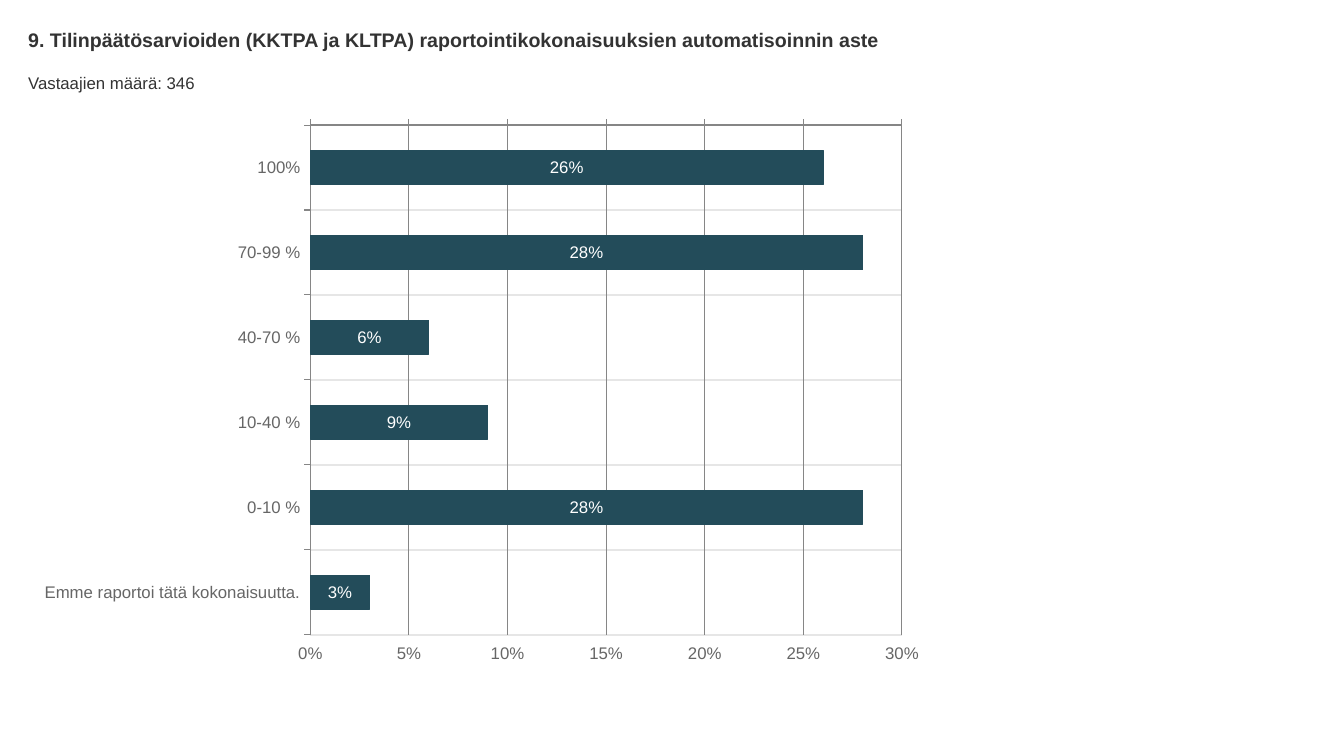
from dataclasses import dataclass
from typing import Any

from lxml.etree import SubElement
from pptx import Presentation
from pptx.chart.chart import Chart
from pptx.chart.data import CategoryChartData
from pptx.dml.color import RGBColor
from pptx.enum.chart import (XL_CHART_TYPE, XL_LABEL_POSITION, XL_TICK_LABEL_POSITION,
                             XL_TICK_MARK)
from pptx.enum.text import MSO_ANCHOR, MSO_AUTO_SIZE, PP_ALIGN
from pptx.oxml.ns import qn
from pptx.util import Cm, Pt

TEXT, AXIS_TEXT, AXIS_LINE = "333333", "666666", "868686"
BAR, BAND_LINE, LABEL = "234C5A", "E6E6E6", "FFFFFF"
LEFT = 0.71


@dataclass(frozen=True)
class Heading:
    text: str
    top: float
    height: float
    size: int
    bold: bool


@dataclass(frozen=True)
class AnswerShare:
    answer: str
    share: float


TITLE = Heading("9. Tilinpäätösarvioiden (KKTPA ja KLTPA) raportointikokonaisuuksien "
                "automatisoinnin aste", 0.71, 0.58, 14, True)
RESPONDENTS = Heading("Vastaajien määrä: 346", 1.83, 0.51, 12, False)
ANSWERS = [
    AnswerShare("100%", 0.26),
    AnswerShare("70-99 %", 0.28),
    AnswerShare("40-70 %", 0.06),
    AnswerShare("10-40 %", 0.09),
    AnswerShare("0-10 %", 0.28),
    AnswerShare("Emme raportoi tätä kokonaisuutta.", 0.03),
]
PLOT_AREA = {"x": 0.31, "y": 0.02, "w": 0.65, "h": 0.91}


def rgb(value: str) -> RGBColor:
    return RGBColor.from_string(value)


def apply(target: Any, values: dict[str, Any]) -> None:
    for name, value in values.items():
        setattr(target, name, value)


def style_font(font: Any, size: int, color: str, bold: bool = False) -> None:
    apply(font, {"name": "Arial", "size": Pt(size), "bold": bold})
    font.color.rgb = rgb(color)


def style_line(line: Any, color: str, width: float) -> None:
    line.color.rgb = rgb(color)
    line.width = Pt(width)


def write_heading(shape: Any, heading: Heading) -> None:
    apply(shape, {"left": Cm(LEFT), "top": Cm(heading.top),
                  "width": Cm(32.49), "height": Cm(heading.height)})
    frame = shape.text_frame
    apply(frame, {"text": heading.text, "word_wrap": True,
                  "auto_size": MSO_AUTO_SIZE.SHAPE_TO_FIT_TEXT,
                  "vertical_anchor": MSO_ANCHOR.TOP,
                  "margin_left": 0, "margin_right": 0,
                  "margin_top": 0, "margin_bottom": 0})
    paragraph = frame.paragraphs[0]
    paragraph.alignment = PP_ALIGN.LEFT
    style_font(paragraph.runs[0].font, heading.size, TEXT, heading.bold)


def style_axis(axis: Any, values: dict[str, Any], grid_color: str, grid_width: float) -> None:
    apply(axis, {"has_major_gridlines": True, "major_tick_mark": XL_TICK_MARK.OUTSIDE,
                 "minor_tick_mark": XL_TICK_MARK.NONE, **values})
    style_font(axis.tick_labels.font, 12, AXIS_TEXT)
    style_line(axis.format.line, AXIS_LINE, 0.75)
    style_line(axis.major_gridlines.format.line, grid_color, grid_width)


def fix_plot_area(chart: Chart) -> None:
    plot_area = chart.element.find(".//" + qn("c:plotArea"))
    layout = plot_area.find(qn("c:layout"))
    if layout is None:
        layout = SubElement(plot_area, qn("c:layout"))
        plot_area.insert(0, layout)
    manual = SubElement(layout, qn("c:manualLayout"))
    settings = {"layoutTarget": "inner", "xMode": "edge", "yMode": "edge", **PLOT_AREA}
    for name, value in settings.items():
        SubElement(manual, qn(f"c:{name}")).set("val", str(value))


def add_answer_chart(slide: Any) -> None:
    data = CategoryChartData(number_format="0%")
    data.categories = [item.answer for item in ANSWERS]
    data.add_series("Series 1", [item.share for item in ANSWERS])
    chart = slide.shapes.add_chart(XL_CHART_TYPE.BAR_CLUSTERED, Cm(LEFT), Cm(2.87),
                                   Cm(22.94), Cm(14.12), data).chart
    apply(chart, {"has_legend": False, "has_title": False})
    style_font(chart.font, 14, "000000")
    fix_plot_area(chart)

    # Axes: answers run downwards, percentages stand below
    style_axis(chart.category_axis,
               {"reverse_order": True, "tick_label_position": XL_TICK_LABEL_POSITION.LOW},
               BAND_LINE, 1)
    style_axis(chart.value_axis,
               {"minimum_scale": 0, "maximum_scale": 0.3, "major_unit": 0.05,
                "tick_label_position": XL_TICK_LABEL_POSITION.HIGH},
               AXIS_LINE, 0.75)
    apply(chart.value_axis.tick_labels,
          {"number_format": "0%", "number_format_is_linked": False})

    # Bars and their labels
    plot = chart.plots[0]
    apply(plot, {"gap_width": 150, "vary_by_categories": False, "has_data_labels": True})
    bars = plot.series[0].format
    bars.fill.solid()
    bars.fill.fore_color.rgb = rgb(BAR)
    style_line(bars.line, BAR, 0.75)
    apply(plot.data_labels, {"show_value": True, "number_format": "0%",
                             "number_format_is_linked": False,
                             "position": XL_LABEL_POSITION.CENTER})
    style_font(plot.data_labels.font, 12, LABEL)


def main() -> None:
    deck = Presentation()
    apply(deck, {"slide_width": Cm(33.87), "slide_height": Cm(19.05)})
    slide = deck.slides.add_slide(deck.slide_layouts.get_by_name("Title Only"))

    # Headings
    write_heading(slide.shapes.title, TITLE)
    write_heading(slide.shapes.add_textbox(0, 0, 0, 0), RESPONDENTS)

    # Chart
    add_answer_chart(slide)
    deck.save("out.pptx")


if __name__ == "__main__":
    main()
